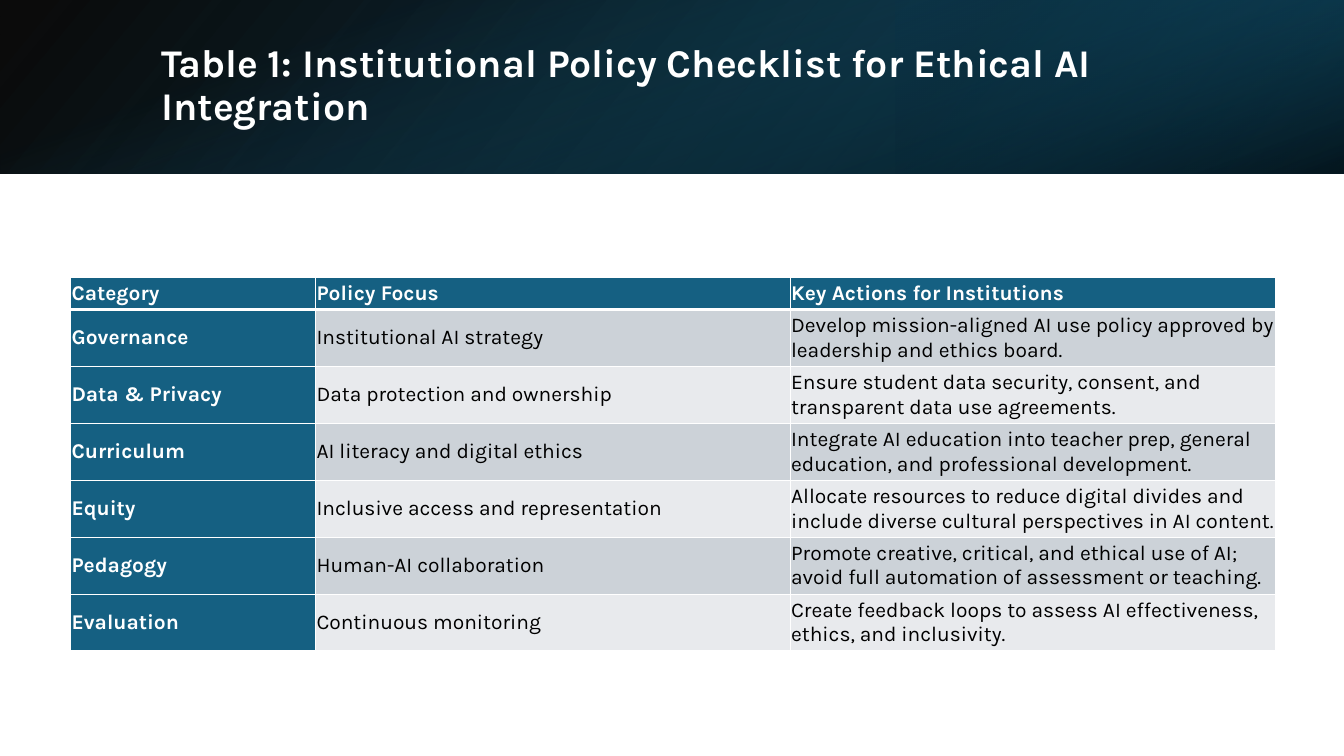
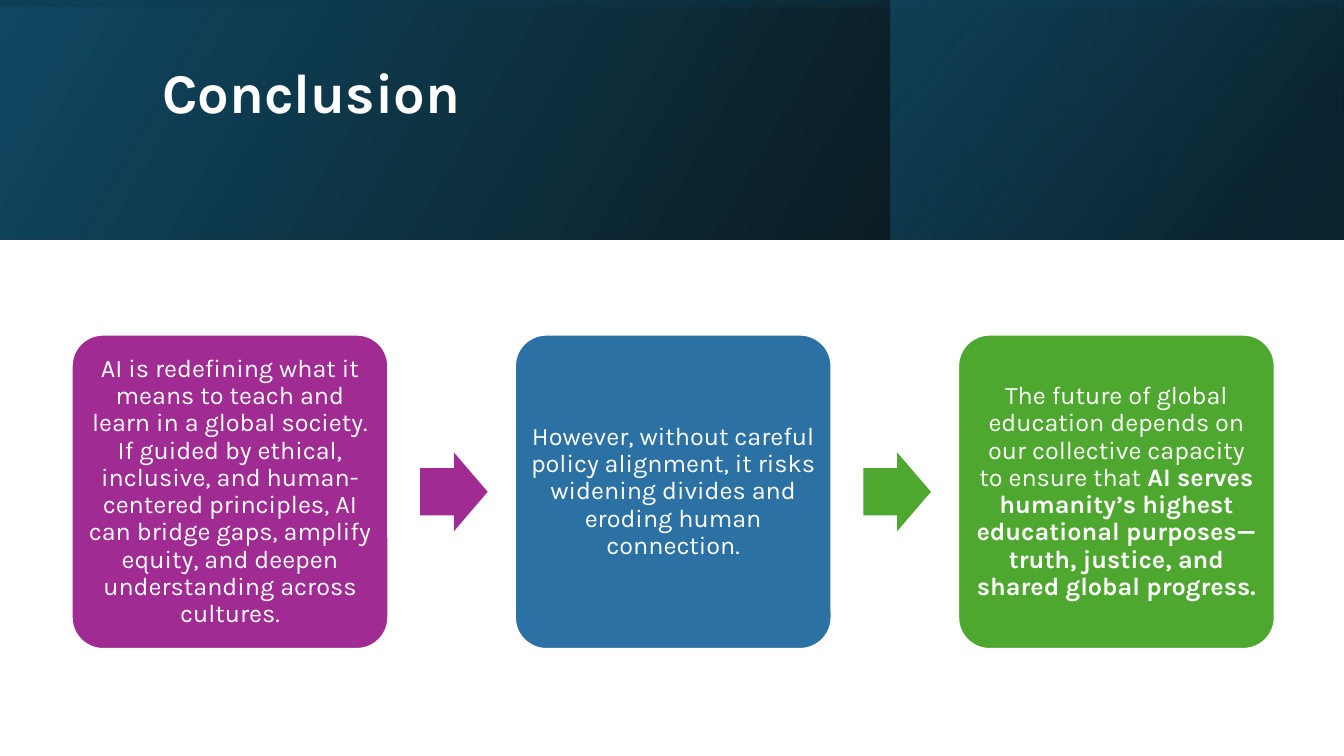
from pptx import Presentation
from pptx.dml.color import RGBColor
from pptx.enum import shapes, text
from pptx.oxml import parse_xml
from pptx.oxml.ns import nsdecls, qn
from pptx.util import Pt

FONT = "Karla"
WHITE, BLACK, TEAL, NAVY, DEEP = "FFFFFF", "000000", "156082", "104862", "0B3041"
W, H = 960, 540

prs = Presentation()
prs.slide_width, prs.slide_height = Pt(W), Pt(H)


def rgb(value):
    return RGBColor.from_string(value)


def add_text(p, value, size, color=WHITE, bold=False):
    r = p.add_run()
    r.text = value
    r.font.color.rgb = rgb(color)
    for name, setting in {"name": FONT, "size": Pt(size), "bold": bold}.items():
        setattr(r.font, name, setting)


# Bands: left, width, rotation, flip, angle, stops of (position, colour, opacity).
# A band turned on its side swaps width and height about the same centre.
headers = [
    {"title": "Table 1: Institutional Policy Checklist for Ethical AI Integration",
     "size": 28, "box": (108, 27, 790, 69), "height": 124,
     "bands": [
         (0, W, 0, True, 140, [(0, BLACK, 96), (100, NAVY, 100)]),
         (640, 320, 180, True, 320, [(19, DEEP, 68), (100, TEAL, 79)]),
         (0, W, 90, False, 340, [(23, TEAL, 0), (99, BLACK, 74)])]},
    {"title": "Conclusion",
     "size": 40, "box": (108.7, 27, 765, 82), "height": 171,
     "bands": [
         (0, W, 0, True, 330, [(0, BLACK, 96), (100, NAVY, 100)]),
         (636.5, 323, 0, True, 320, [(19, DEEP, 68), (100, TEAL, 48)]),
         (0, W, 270, True, 350, [(23, NAVY, 16), (99, BLACK, 45)])]},
]

for header in headers:
    s = prs.slides.add_slide(prs.slide_layouts[5])
    height = header["height"]
    for left, width, rotation, flip, angle, stops in header["bands"]:
        x, y, w, h = left, 0, width, height
        if rotation % 180:
            x, y, w, h = left + (width - height) / 2, (height - width) / 2, height, width
        sp = s.shapes.add_shape(shapes.MSO_SHAPE.RECTANGLE, Pt(x), Pt(y), Pt(w), Pt(h))
        sp.shadow.inherit = False
        sp.line.fill.background()
        sp.fill.background()
        sp.rotation = rotation
        sp_pr = sp._element.spPr
        if flip:
            sp_pr.xfrm.set("flipH", "1")
        stop_xml = "".join(
            f'<a:gs pos="{pos * 1000}"><a:srgbClr val="{color}">'
            f'<a:alpha val="{alpha * 1000}"/></a:srgbClr></a:gs>'
            for pos, color, alpha in stops)
        sp_pr.replace(sp_pr.find(qn("a:noFill")), parse_xml(
            f'<a:gradFill {nsdecls("a")} rotWithShape="1"><a:gsLst>{stop_xml}</a:gsLst>'
            f'<a:lin ang="{angle * 60000}" scaled="0"/></a:gradFill>'))

    title = s.shapes.title
    title.left, title.top, title.width, title.height = map(Pt, header["box"])
    s.shapes._spTree.append(title._element)  # in front of the bands
    tf = title.text_frame
    for name, setting in {"word_wrap": True, "auto_size": text.MSO_AUTO_SIZE.NONE,
                          "vertical_anchor": text.MSO_ANCHOR.MIDDLE}.items():
        setattr(tf, name, setting)
    p = tf.paragraphs[0]
    p.alignment, p.line_spacing = text.PP_ALIGN.LEFT, 0.9
    add_text(p, header["title"], header["size"], bold=True)

checklist_slide, conclusion_slide = prs.slides

# Policy checklist
checklist = [
    ("Category", "Policy Focus", "Key Actions for Institutions"),
    ("Governance", "Institutional AI strategy",
     "Develop mission-aligned AI use policy approved by leadership and ethics board."),
    ("Data & Privacy", "Data protection and ownership",
     "Ensure student data security, consent, and transparent data use agreements."),
    ("Curriculum", "AI literacy and digital ethics",
     "Integrate AI education into teacher prep, general education, and professional development."),
    ("Equity", "Inclusive access and representation",
     "Allocate resources to reduce digital divides and include diverse cultural perspectives "
     "in AI content."),
    ("Pedagogy", "Human-AI collaboration",
     "Promote creative, critical, and ethical use of AI; avoid full automation of assessment "
     "or teaching."),
    ("Evaluation", "Continuous monitoring",
     "Create feedback loops to assess AI effectiveness, ethics, and inclusivity."),
]
col_widths = [175, 339, 347]
head_height, row_height = 23, 40.7
table = checklist_slide.shapes.add_table(
    len(checklist), len(col_widths), Pt(50.4), Pt(198), Pt(sum(col_widths)),
    Pt(head_height + row_height * (len(checklist) - 1))).table
for col, width in zip(table.columns, col_widths):
    col.width = Pt(width)

for i, values in enumerate(checklist):
    table.rows[i].height = Pt(row_height if i else head_height)
    for j, value in enumerate(values):
        cell = table.cell(i, j)
        heading = i == 0 or j == 0
        cell.vertical_anchor = text.MSO_ANCHOR.MIDDLE
        for side in ("left", "top", "right", "bottom"):
            setattr(cell, f"margin_{side}", Pt(0.72))
        cell.fill.solid()
        cell.fill.fore_color.rgb = rgb(TEAL if heading else "CCD2D8" if i % 2 else "E8EAED")
        add_text(cell.text_frame.paragraphs[0], value, 15, WHITE if heading else BLACK, heading)
        borders = {"L": 1, "R": 1, "T": 3 if i == 1 else 1, "B": 3 if i == 0 else 1}
        for k, (side, width) in enumerate(borders.items()):
            cell._tc.get_or_add_tcPr().insert(k, parse_xml(
                f'<a:ln{side} {nsdecls("a")} w="{Pt(width)}"><a:solidFill>'
                f'<a:srgbClr val="{WHITE}"/></a:solidFill></a:ln{side}>'))

# Conclusion: three cards joined by arrows
cards = [
    ("A02B93", "A02B93",
     [("AI is redefining what it means to teach and learn in a global society. If guided by "
       "ethical, inclusive, and human-centered principles, AI can bridge gaps, amplify equity, "
       "and deepen understanding across cultures.", False)]),
    ("2C71A4", "4EA72E",
     [("However, without careful policy alignment, it risks widening divides and eroding "
       "human connection.", False)]),
    ("4EA72E", None,
     [("The future of global education depends on our collective capacity to ensure that ", False),
      ("AI serves humanity’s highest educational purposes—truth, justice, and shared global "
       "progress.", True)]),
]
card_left, card_top, card_w, card_h, step = 51.2, 239, 226.2, 224.6, 316.6
arrow_w, arrow_h = 48.2, 56.2
arrow_offset = 249

for i, (color, arrow_color, runs) in enumerate(cards):
    x = card_left + i * step
    parts = [(shapes.MSO_SHAPE.ROUNDED_RECTANGLE, x, card_top, card_w, card_h, [0.1], color)]
    if arrow_color:
        parts.append((shapes.MSO_SHAPE.RIGHT_ARROW, x + arrow_offset,
                      card_top + (card_h - arrow_h) / 2, arrow_w, arrow_h,
                      [0.6, 0.5], arrow_color))
    for kind, left, top, width, height, adjustments, fill in parts:
        sp = conclusion_slide.shapes.add_shape(kind, Pt(left), Pt(top), Pt(width), Pt(height))
        sp.shadow.inherit = False
        sp.fill.solid()
        sp.fill.fore_color.rgb = rgb(fill)
        for k, adjustment in enumerate(adjustments):
            sp.adjustments[k] = adjustment
        if kind == shapes.MSO_SHAPE.RIGHT_ARROW:
            sp.line.fill.background()
            continue
        sp.line.color.rgb = rgb(WHITE)
        sp.line.width = Pt(1.5)
        tf = sp.text_frame
        tf.word_wrap, tf.vertical_anchor = True, text.MSO_ANCHOR.MIDDLE
        for side in ("left", "top", "right", "bottom"):
            setattr(tf, f"margin_{side}", Pt(4.8))
        p = tf.paragraphs[0]
        p.alignment, p.line_spacing = text.PP_ALIGN.CENTER, 0.9
        for value, bold in runs:
            add_text(p, value, 18, bold=bold)

prs.save("out.pptx")
